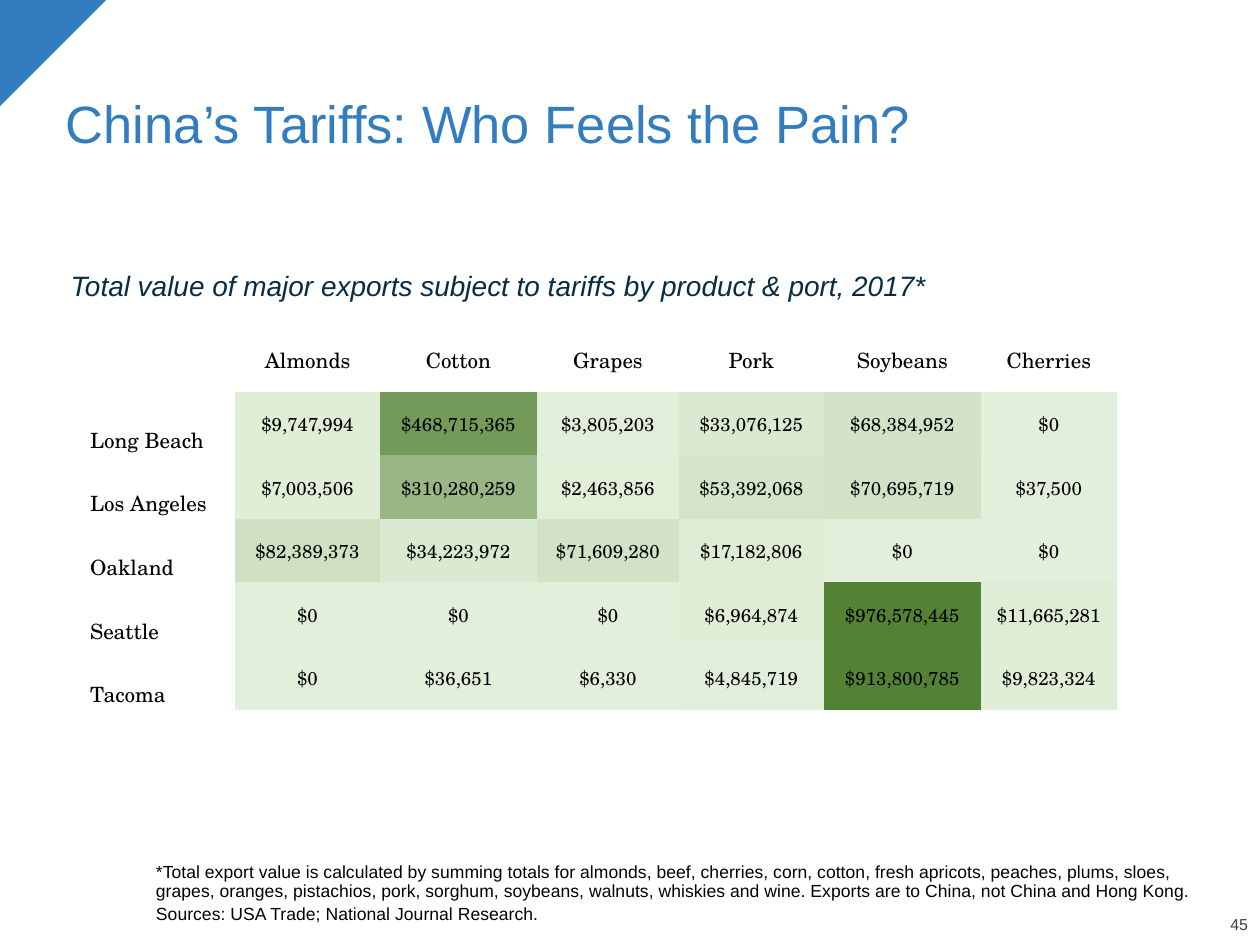
from dataclasses import dataclass

from pptx import Presentation
from pptx.dml.color import RGBColor
from pptx.enum.shapes import MSO_SHAPE as Shape
from pptx.enum.text import MSO_ANCHOR as Anchor, MSO_AUTO_SIZE as AutoSize, PP_ALIGN as Align
from pptx.oxml.ns import qn
from pptx.util import Emu, Pt


@dataclass(frozen=True)
class Theme:
    blue: str = "337DBE"
    navy: str = "072C44"
    grey: str = "404040"
    black: str = "000000"
    heat_low: str = "E2EFDA"
    heat_high: str = "548235"
    sans: str = "Arial"
    serif: str = "TeX Gyre Schola"
    title_size: float = 22.5
    subtitle_size: float = 12
    label_size: float = 9
    value_size: float = 8
    note_size: float = 7.5
    number_size: float = 6.8


theme = Theme()
NO_STYLE_NO_GRID = "{2D5ABB26-0587-4C30-8999-92F81FD0307C}"
HEAT_LIMIT = 604_000_000  # export value at which the darkest green is reached


def px(length):
    return Emu(round(length * 914400 / 168))


def write(frame, lines, size, color, font=theme.sans, align=Align.LEFT, anchor=Anchor.TOP,
          spacing=0.9, italic=False):
    """Fill a text frame or table cell, one paragraph per line."""
    frame.vertical_anchor = anchor
    text = getattr(frame, "text_frame", frame)
    for index, line in enumerate(lines):
        para = text.add_paragraph() if index else text.paragraphs[0]
        para.alignment = align
        para.line_spacing = spacing
        para.space_before = Pt(1.5 if index else 0)
        span = para.add_run()
        span.text = line
        span.font.name = font
        span.font.size = Pt(size)
        span.font.italic = italic
        span.font.color.rgb = RGBColor.from_string(color)


deck = Presentation()
deck.slide_width, deck.slide_height = px(1260), px(945)
page = deck.slides.add_slide(deck.slide_layouts[5])

# Corner
corner = page.shapes.add_shape(Shape.RIGHT_TRIANGLE, 0, 0, px(106), px(106))
corner.rotation = 90
corner.shadow.inherit = False
corner.fill.solid()
corner.fill.fore_color.rgb = RGBColor.from_string(theme.blue)
corner.line.fill.background()

# Title
title = page.shapes.title
title.left, title.top, title.width, title.height = px(49), px(32), px(1166), px(131)
title.text_frame.auto_size = AutoSize.NONE
title.text_frame.word_wrap = True
write(title.text_frame, ["China’s Tariffs: Who Feels the Pain?"],
      theme.title_size, theme.blue, anchor=Anchor.BOTTOM)

# Subtitle
subtitle = page.shapes.add_textbox(px(54), px(264), px(1164), px(55))
subtitle.text_frame.word_wrap = True
write(subtitle.text_frame,
      ["Total value of major exports subject to tariffs by product & port, 2017*"],
      theme.subtitle_size, theme.navy, italic=True)

# Footnote and slide number
footnote = [
    "*Total export value is calculated by summing totals for almonds, beef, cherries, corn, "
    "cotton, fresh apricots, peaches, plums, sloes, grapes, oranges, pistachios, pork, sorghum, "
    "soybeans, walnuts, whiskies and wine. Exports are to China, not China and Hong Kong.",
    "Sources: USA Trade; National Journal Research.",
]
for place, lines, size, color, align in [
    ((156, 867, 1058, 57), footnote, theme.note_size, theme.black, Align.LEFT),
    ((1188, 917, 60, 17), ["45"], theme.number_size, theme.grey, Align.RIGHT),
]:
    box = page.shapes.add_textbox(*map(px, place))
    frame = box.text_frame
    frame.word_wrap = True
    frame.margin_left = frame.margin_right = frame.margin_top = frame.margin_bottom = 0
    write(frame, lines, size, color, align=align, anchor=Anchor.BOTTOM)

# Heat map of exports
products = ["Almonds", "Cotton", "Grapes", "Pork", "Soybeans", "Cherries"]
exports = {
    "Long Beach": [9747994, 468715365, 3805203, 33076125, 68384952, 0],
    "Los Angeles": [7003506, 310280259, 2463856, 53392068, 70695719, 37500],
    "Oakland": [82389373, 34223972, 71609280, 17182806, 0, 0],
    "Seattle": [0, 0, 0, 6964874, 976578445, 11665281],
    "Tacoma": [0, 36651, 6330, 4845719, 913800785, 9823324],
}
column_widths = [146, 145, 157, 142, 145, 157, 136]
table_height = 382
rows = [[None, *products]] + [[port, *values] for port, values in exports.items()]

table = page.shapes.add_table(len(rows), len(column_widths), px(89), px(328),
                              px(sum(column_widths)), px(table_height)).table
table.first_row = table.horz_banding = False
table._tbl.tblPr.find(qn("a:tableStyleId")).text = NO_STYLE_NO_GRID
for column, width in zip(table.columns, column_widths):
    column.width = px(width)

low = RGBColor.from_string(theme.heat_low)
high = RGBColor.from_string(theme.heat_high)
for row_index, entries in enumerate(rows):
    table.rows[row_index].height = px(table_height / len(rows))
    for column_index, entry in enumerate(entries):
        cell = table.cell(row_index, column_index)
        cell.margin_left = cell.margin_right = cell.margin_top = px(1)
        cell.margin_bottom = 0
        if isinstance(entry, int):
            heat = min(entry / HEAT_LIMIT, 1)
            cell.fill.solid()
            cell.fill.fore_color.rgb = RGBColor(
                *(round(start + (end - start) * heat) for start, end in zip(low, high)))
            label, size = f"${entry:,}", theme.value_size
        else:
            cell.fill.background()
            label, size = entry, theme.label_size
        if label:
            is_port = column_index == 0
            write(cell, [label], size, theme.black, theme.serif,
                  align=Align.LEFT if is_port else Align.CENTER,
                  anchor=Anchor.BOTTOM if is_port else Anchor.MIDDLE, spacing=1.0)

deck.save("out.pptx")
